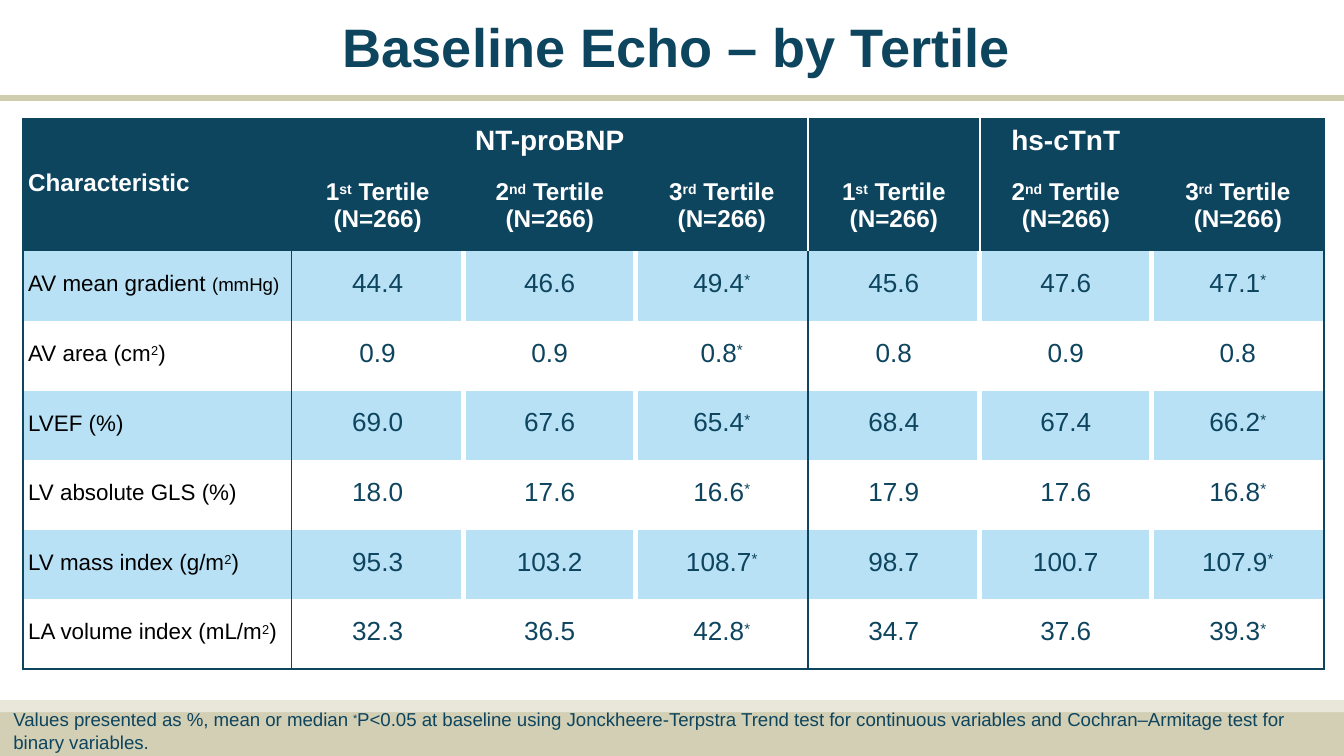
from lxml.etree import SubElement
from pptx import Presentation
from pptx.dml.color import RGBColor
from pptx.enum.shapes import MSO_CONNECTOR, MSO_SHAPE
from pptx.enum.text import MSO_ANCHOR, MSO_AUTO_SIZE, PP_ALIGN
from pptx.oxml.ns import qn
from pptx.util import Inches, Pt

NAVY, WHITE, BLACK, SKY = "0D445E", "FFFFFF", "000000", "B8E1F5"


def write(para, text, size, color, bold=False, align=PP_ALIGN.LEFT):
    para.alignment = align
    for index, piece in enumerate(text.split("^")):
        if piece:
            span = para.add_run()
            span.text = piece
            if index % 2:
                span.font._element.set("baseline", "25000")
    para.font.name = "Arial"
    para.font.size = Pt(size)
    para.font.bold = bold
    para.font.color.rgb = RGBColor.from_string(color)


def draw_border(cell, side, color, width):
    line = SubElement(cell._tc.get_or_add_tcPr(), qn(f"a:ln{side}"), w=str(Pt(width)))
    fill = SubElement(line, qn("a:solidFill"))
    SubElement(fill, qn("a:srgbClr"), val=color)


deck = Presentation()
deck.slide_width = Inches(10)
deck.slide_height = deck.slide_width * 9 // 16
page = deck.slides.add_slide(deck.slide_layouts[5])

for top, bottom, color in [(Inches(5.3), deck.slide_height, "D2CFB5"), (Inches(5.21), Inches(5.3), "E9E7DA")]:
    band = page.shapes.add_shape(MSO_SHAPE.RECTANGLE, 0, top, deck.slide_width, bottom - top)
    band.shadow.inherit = False
    band.fill.solid()
    band.fill.fore_color.rgb = RGBColor.from_string(color)
    band.line.fill.background()

rule = page.shapes.add_connector(MSO_CONNECTOR.STRAIGHT, 0, Inches(0.73), deck.slide_width, Inches(0.73))
rule.line.color.rgb = RGBColor.from_string("D0CDAE")
rule.line.width = Pt(3)
SubElement(rule._element.spPr, qn("a:effectLst"))

title = page.shapes.title
title.left, title.top, title.width, title.height = Inches(2.55), Inches(0.09), Inches(7.23), Inches(0.54)
footnote = page.shapes.add_textbox(Inches(0.1), Inches(5.26), Inches(9.6), Inches(0.36))
for box in (title, footnote):
    frame = box.text_frame
    frame.margin_left = frame.margin_right = frame.margin_bottom = 0
    frame.margin_top = Inches(0.01)
    frame.vertical_anchor = MSO_ANCHOR.TOP
    frame.auto_size = MSO_AUTO_SIZE.NONE
    frame.word_wrap = True
write(title.text_frame.paragraphs[0], "Baseline Echo – by Tertile", 29, NAVY, True)
write(footnote.text_frame.paragraphs[0],
      "Values presented as %, mean or median ^*^P<0.05 at baseline using Jonckheere-Terpstra Trend test "
      "for continuous variables and Cochran–Armitage test for", 10, NAVY)
write(footnote.text_frame.add_paragraph(), "binary variables.", 10, NAVY)

tertiles = ["1^st^ Tertile\n(N=266)", "2^nd^ Tertile\n(N=266)", "3^rd^ Tertile\n(N=266)"]
rows = [
    ["", "", "NT-proBNP", "", "", "hs-cTnT", ""],
    ["Characteristic"] + tertiles * 2,
    ["AV mean gradient ", "44.4", "46.6", "49.4^*", "45.6", "47.6", "47.1^*"],
    ["AV area (cm^2^)", "0.9", "0.9", "0.8^*", "0.8", "0.9", "0.8"],
    ["LVEF (%)", "69.0", "67.6", "65.4^*", "68.4", "67.4", "66.2^*"],
    ["LV absolute GLS (%)", "18.0", "17.6", "16.6^*", "17.9", "17.6", "16.8^*"],
    ["LV mass index (g/m^2^)", "95.3", "103.2", "108.7^*", "98.7", "100.7", "107.9^*"],
    ["LA volume index (mL/m^2^)", "32.3", "36.5", "42.8^*", "34.7", "37.6", "39.3^*"],
]
heights = [0.35, 0.64] + [3.11 / 6] * 6
widths = [2] + [1.28] * 6
header_edges = {0: (NAVY, 1), 4: (WHITE, 1), 7: (NAVY, 1)}
body_edges = {edge: (NAVY, 1) if edge in (0, 1, 4, 7) else (WHITE, 3) for edge in range(8)}

holder = page.shapes.add_table(len(rows), len(widths), Inches(0.17), Inches(0.88),
                               Inches(sum(widths)), Inches(sum(heights)))
table = holder.table
table._tbl.tblPr.find(qn("a:tableStyleId")).text = "{2D5ABB26-0587-4C30-8999-92F81FD0307C}"
table.first_row = table.horz_banding = False
for column, width in zip(table.columns, widths):
    column.width = Inches(width)

for r, texts in enumerate(rows):
    table.rows[r].height = Inches(heights[r])
    header = r < 2
    edges = header_edges if header else body_edges
    for c, text in enumerate(texts):
        cell = table.cell(r, c)
        label = c == 0
        cell.margin_right = cell.margin_bottom = 0
        cell.margin_left = Inches(0.04 if label else 0)
        if header:
            cell.margin_top = Inches(0.05 if r == 0 else 0.03 if label else 0.1)
            size, color = (15 if r == 0 else 13), WHITE
        else:
            cell.margin_top = Inches(0.15 if label else 0.13)
            size, color = (12, BLACK) if label else (14, NAVY)
        for side, edge in (("L", c), ("R", c + 1)):
            if edge in edges:
                draw_border(cell, side, *edges[edge])
        if r == len(rows) - 1:
            draw_border(cell, "B", NAVY, 1)
        if header or r % 2 == 0:
            cell.fill.solid()
            cell.fill.fore_color.rgb = RGBColor.from_string(NAVY if header else SKY)
        else:
            cell.fill.background()
        frame = cell.text_frame
        for index, line in enumerate(text.split("\n")):
            para = frame.add_paragraph() if index else frame.paragraphs[0]
            write(para, line, size, color, header, PP_ALIGN.LEFT if label else PP_ALIGN.CENTER)

unit = table.cell(2, 0).text_frame.paragraphs[0].add_run()
unit.text = "(mmHg)"
unit.font.size = Pt(10)

deck.save("out.pptx")
